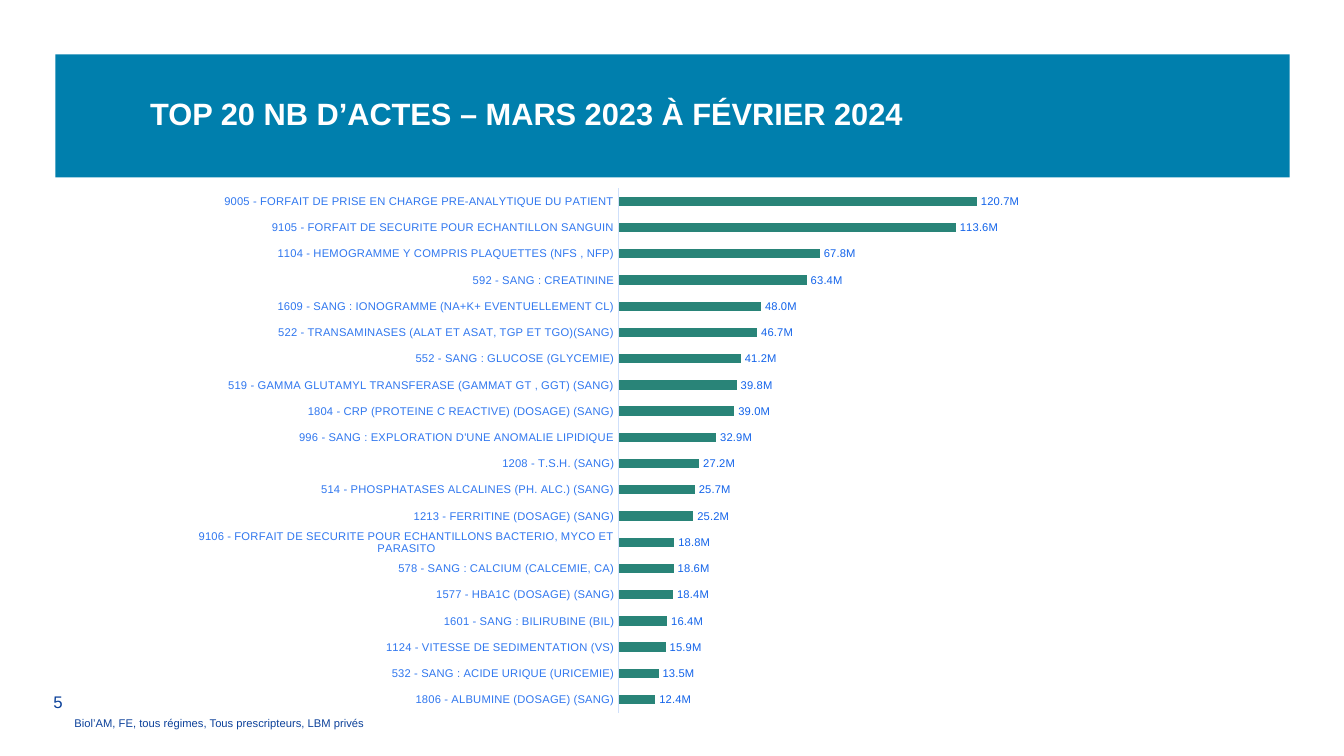
from lxml import etree
from pptx import Presentation, util as u
from pptx.chart.data import CategoryChartData
from pptx.dml.color import RGBColor
from pptx.enum import chart as ch, text
from pptx.oxml.ns import qn

PX = 9144  # 100 px to the inch
HUES = {"band": "007FAD", "white": "FFFFFF", "navy": "0C419A",
        "bar": "298478", "label": "3077EF", "value": "1263EA", "axis": "CFE0FB"}
ACTS = [
    ("9005 - FORFAIT DE PRISE EN CHARGE PRE-ANALYTIQUE DU PATIENT", 120.7),
    ("9105 - FORFAIT DE SECURITE POUR ECHANTILLON SANGUIN", 113.6),
    ("1104 - HEMOGRAMME Y COMPRIS PLAQUETTES (NFS , NFP)", 67.8),
    ("592 - SANG : CREATININE", 63.4),
    ("1609 - SANG : IONOGRAMME (NA+K+ EVENTUELLEMENT CL)", 48.0),
    ("522 - TRANSAMINASES (ALAT ET ASAT, TGP ET TGO)(SANG)", 46.7),
    ("552 - SANG : GLUCOSE (GLYCEMIE)", 41.2),
    ("519 - GAMMA GLUTAMYL TRANSFERASE (GAMMAT GT , GGT) (SANG)", 39.8),
    ("1804 - CRP (PROTEINE C REACTIVE) (DOSAGE) (SANG)", 39.0),
    ("996 - SANG : EXPLORATION D'UNE ANOMALIE LIPIDIQUE", 32.9),
    ("1208 - T.S.H. (SANG)", 27.2),
    ("514 - PHOSPHATASES ALCALINES (PH. ALC.) (SANG)", 25.7),
    ("1213 - FERRITINE (DOSAGE) (SANG)", 25.2),
    ("9106 - FORFAIT DE SECURITE POUR ECHANTILLONS BACTERIO, MYCO ET PARASITO", 18.8),
    ("578 - SANG : CALCIUM (CALCEMIE, CA)", 18.6),
    ("1577 - HBA1C (DOSAGE) (SANG)", 18.4),
    ("1601 - SANG : BILIRUBINE (BIL)", 16.4),
    ("1124 - VITESSE DE SEDIMENTATION (VS)", 15.9),
    ("532 - SANG : ACIDE URIQUE (URICEMIE)", 13.5),
    ("1806 - ALBUMINE (DOSAGE) (SANG)", 12.4),
]


def rgb(hue):
    return RGBColor.from_string(HUES[hue])


def scale(*sizes):
    return [size * PX for size in sizes]


def assign(item, **values):
    for key, value in values.items():
        setattr(item, key, value)


def style(font, size, hue, bold=False):
    assign(font, name="Arial", size=u.Pt(size), bold=bold)
    font.color.rgb = rgb(hue)


def add_title(slide, words, box):
    title = slide.shapes.title
    assign(title, **dict(zip(("left", "top", "width", "height"), scale(*box))))
    title.fill.solid()
    title.fill.fore_color.rgb = rgb("band")
    frame = title.text_frame
    left, edge = scale(94, 8)
    assign(frame, text=words, word_wrap=True, auto_size=text.MSO_AUTO_SIZE.NONE,
           vertical_anchor=text.MSO_ANCHOR.MIDDLE, margin_left=left,
           margin_right=edge, margin_top=edge, margin_bottom=edge)
    line = frame.paragraphs[0]
    assign(line, alignment=text.PP_ALIGN.LEFT, line_spacing=0.9)
    style(line.runs[0].font, 22, "white", True)


def add_note(slide, words, box, size, anchor=text.MSO_ANCHOR.TOP):
    frame = slide.shapes.add_textbox(*scale(*box)).text_frame
    assign(frame, text=words, word_wrap=True, vertical_anchor=anchor)
    style(frame.paragraphs[0].runs[0].font, size, "navy")


def place_plot(chart, **shares):
    """Fix the inner plot area as shares of the chart frame."""
    area = chart.element.find(".//" + qn("c:plotArea"))
    old = area.find(qn("c:layout"))
    if old is not None:
        area.remove(old)
    layout = etree.Element(qn("c:layout"))
    manual = etree.SubElement(layout, qn("c:manualLayout"))
    modes = {"layoutTarget": "inner", "xMode": "edge", "yMode": "edge"}
    for tag, value in {**modes, **shares}.items():
        etree.SubElement(manual, qn("c:" + tag)).set("val", str(value))
    area.insert(0, layout)


def add_bars(slide, acts, box):
    data = CategoryChartData(number_format="#,##0")
    data.categories = [name for name, _ in acts]
    data.add_series("Series 1", [round(count * 1_000_000) for _, count in acts])
    kind = ch.XL_CHART_TYPE.BAR_CLUSTERED
    chart = slide.shapes.add_chart(kind, *scale(*box), data).chart
    assign(chart, has_legend=False, has_title=False)
    style(chart.font, 10, "navy")

    names = chart.category_axis
    assign(names, reverse_order=True, has_major_gridlines=False,
           major_tick_mark=ch.XL_TICK_MARK.NONE)
    style(names.tick_labels.font, 8, "label")
    names.format.line.color.rgb = rgb("axis")
    names.format.line.width = u.Pt(0.75)
    assign(chart.value_axis, visible=False, has_major_gridlines=False,
           minimum_scale=0, maximum_scale=140_000_000)

    plot = chart.plots[0]
    assign(plot, gap_width=182, vary_by_categories=False, has_data_labels=True)
    labels = plot.data_labels
    assign(labels, show_value=True, number_format='#,##0.0,,"M"',
           number_format_is_linked=False,
           position=ch.XL_LABEL_POSITION.OUTSIDE_END)
    style(labels.font, 8, "value")
    fill = plot.series[0].format.fill
    fill.solid()
    fill.fore_color.rgb = rgb("bar")
    place_plot(chart, x=0.5, y=0.02, w=0.48, h=0.96)


def main():
    deck = Presentation()
    deck.slide_width, deck.slide_height = scale(1333, 750)
    slide = deck.slides.add_slide(deck.slide_layouts.get_by_name("Title Only"))
    add_note(slide, "5", (43, 681, 79, 31), 12, text.MSO_ANCHOR.MIDDLE)
    add_title(slide, "TOP 20 NB D’ACTES – MARS 2023 À FÉVRIER 2024", (55, 54, 1224, 122))
    add_bars(slide, ACTS, (184, 176, 859, 542))
    add_note(slide, "Biol’AM, FE, tous régimes, Tous prescripteurs, LBM privés",
             (64, 706, 576, 24), 8)
    deck.save("out.pptx")


if __name__ == "__main__":
    main()
